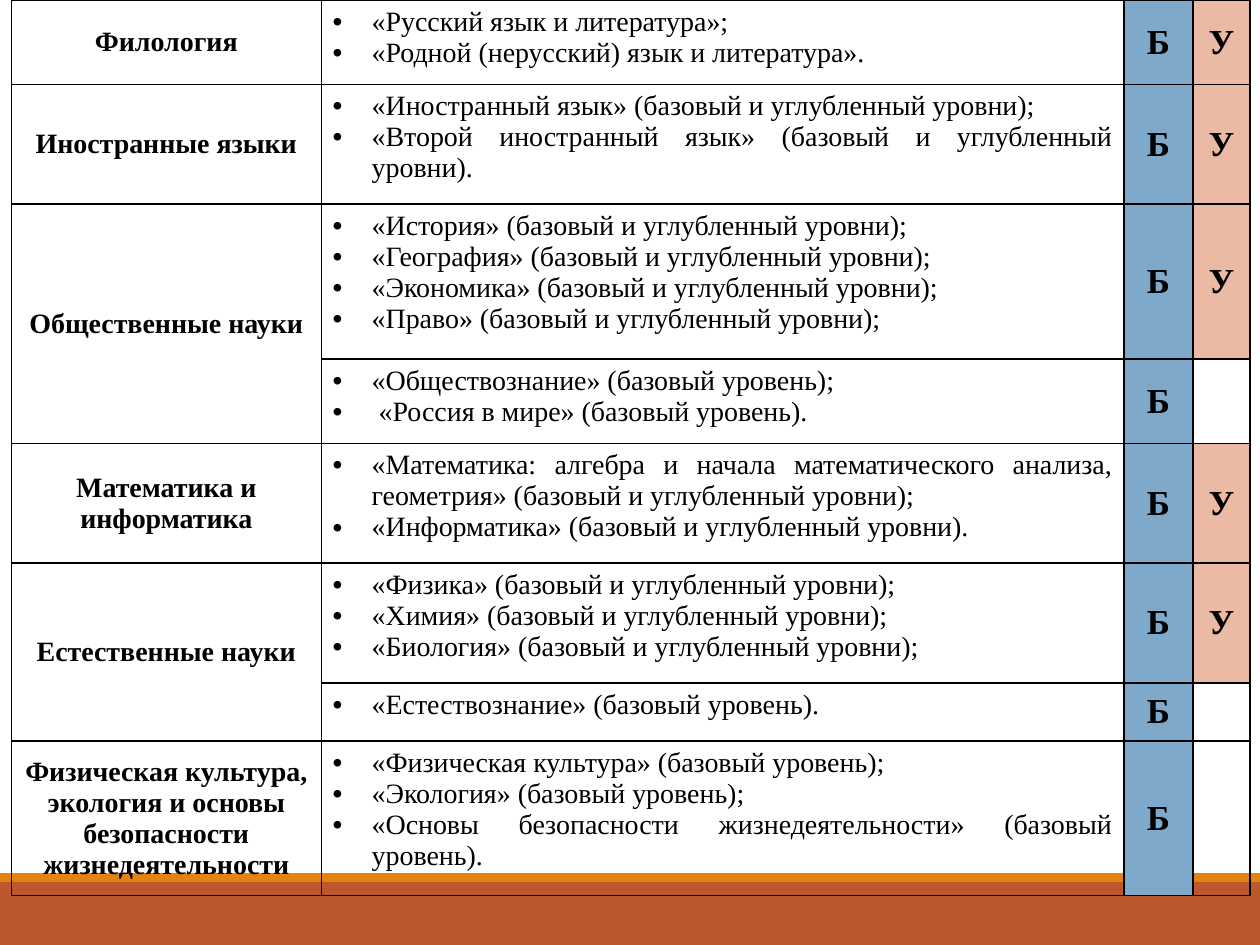
from dataclasses import dataclass
from pptx import Presentation, util as u
from pptx.dml.color import RGBColor
from pptx.enum import shapes, text
from pptx.oxml.ns import qn
from lxml import etree


@dataclass(frozen=True)
class Theme:
    font: str = "Times New Roman"
    ink: str = "000000"
    base: str = "7EA9CA"
    deep: str = "EABAA5"
    band: str = "BD582C"
    trim: str = "E48312"
    body: int = 16
    mark: int = 20


THEME = Theme()
BOTH = "(базовый и углубленный уровни)"
BASE = "(базовый уровень)"
COLS = [2.46, 6.37, 0.55, 0.45]
ROWS = [
    (0.67, "Филология", "У", [
        "«Русский язык и литература»;",
        "«Родной (нерусский) язык и литература»."]),
    (0.95, "Иностранные языки", "У", [
        f"«Иностранный язык» {BOTH};",
        f"«Второй иностранный язык» {BOTH}."]),
    (1.23, "Общественные науки", "У", [
        f"«История» {BOTH};",
        f"«География» {BOTH};",
        f"«Экономика» {BOTH};",
        f"«Право» {BOTH};"]),
    (0.67, None, "", [
        f"«Обществознание» {BASE};",
        f" «Россия в мире» {BASE}."]),
    (0.95, "Математика и информатика", "У", [
        f"«Математика: алгебра и начала математического анализа, геометрия» {BOTH};",
        f"«Информатика» {BOTH}."]),
    (0.95, "Естественные науки", "У", [
        f"«Физика» {BOTH};",
        f"«Химия» {BOTH};",
        f"«Биология» {BOTH};"]),
    (0.46, None, "", [f"«Естествознание» {BASE}."]),
    (1.23, "Физическая культура, экология и основы безопасности жизнедеятельности", "", [
        f"«Физическая культура» {BASE};",
        f"«Экология» {BASE};",
        f"«Основы безопасности жизнедеятельности» {BASE}."]),
]


def add_band(slide, top, height, color):
    band = slide.shapes.add_shape(
        shapes.MSO_SHAPE.RECTANGLE, 0, u.Inches(top), u.Inches(10), u.Inches(height))
    band.shadow.inherit = False
    band.fill.solid()
    band.fill.fore_color.rgb = RGBColor.from_string(color)
    band.line.fill.background()


def add_grid(slide):
    frame = slide.shapes.add_table(
        len(ROWS), len(COLS), u.Inches(0.09), 0,
        u.Inches(sum(COLS)), u.Inches(sum(row[0] for row in ROWS)))
    grid = frame.table
    grid.first_row = grid.horz_banding = False
    for col, width in zip(grid.columns, COLS):
        col.width = u.Inches(width)
    for row, (height, *_) in zip(grid.rows, ROWS):
        row.height = u.Inches(height)
    for cell in grid.iter_cells():
        cell.margin_left = cell.margin_right = u.Inches(0.09)
        add_edges(cell)
        cell.fill.background()
    return grid


def add_edges(cell):
    props = cell._tc.get_or_add_tcPr()
    for side in ("a:lnL", "a:lnR", "a:lnT", "a:lnB"):
        edge = etree.SubElement(props, qn(side), w=str(u.Pt(1)))
        fill = etree.SubElement(edge, qn("a:solidFill"))
        etree.SubElement(fill, qn("a:srgbClr"), val=THEME.ink)


def style_runs(para, size, bold):
    for run in para.runs:
        run.font.name = THEME.font
        run.font.size = u.Pt(size)
        run.font.bold = bold
        run.font.color.rgb = RGBColor.from_string(THEME.ink)


def set_label(cell, label, size):
    cell.vertical_anchor = text.MSO_ANCHOR.MIDDLE
    para = cell.text_frame.paragraphs[0]
    para.text = label
    para.alignment = text.PP_ALIGN.CENTER
    style_runs(para, size, True)


def set_mark(cell, label, color):
    set_label(cell, label, THEME.mark)
    cell.fill.solid()
    cell.fill.fore_color.rgb = RGBColor.from_string(color)


def set_list(cell, items):
    cell.text_frame.text = "\n".join(items)
    for para in cell.text_frame.paragraphs:
        para.alignment = text.PP_ALIGN.JUSTIFY
        props = para._p.get_or_add_pPr()
        props.set("marL", str(u.Inches(0.31)))
        props.set("indent", str(u.Inches(-0.31)))
        etree.SubElement(props, qn("a:buFont"), typeface="Arial")
        etree.SubElement(props, qn("a:buChar"), char="•")
        tabs = etree.SubElement(props, qn("a:tabLst"))
        etree.SubElement(tabs, qn("a:tab"), pos=str(u.Inches(0.88)), algn="l")
        style_runs(para, THEME.body, False)


def main():
    deck = Presentation()
    deck.slide_width, deck.slide_height = u.Inches(10), u.Inches(7.5)
    slide = deck.slides.add_slide(deck.slide_layouts[6])
    add_band(slide, 7, 0.5, THEME.band)
    add_band(slide, 6.93, 0.07, THEME.trim)
    grid = add_grid(slide)
    for i, (_, field, deep, items) in enumerate(ROWS):
        if field:
            set_label(grid.cell(i, 0), field, THEME.body)
        else:
            grid.cell(i - 1, 0).merge(grid.cell(i, 0))
        set_list(grid.cell(i, 1), items)
        set_mark(grid.cell(i, 2), "Б", THEME.base)
        if deep:
            set_mark(grid.cell(i, 3), deep, THEME.deep)
    deck.save("out.pptx")


if __name__ == "__main__":
    main()
